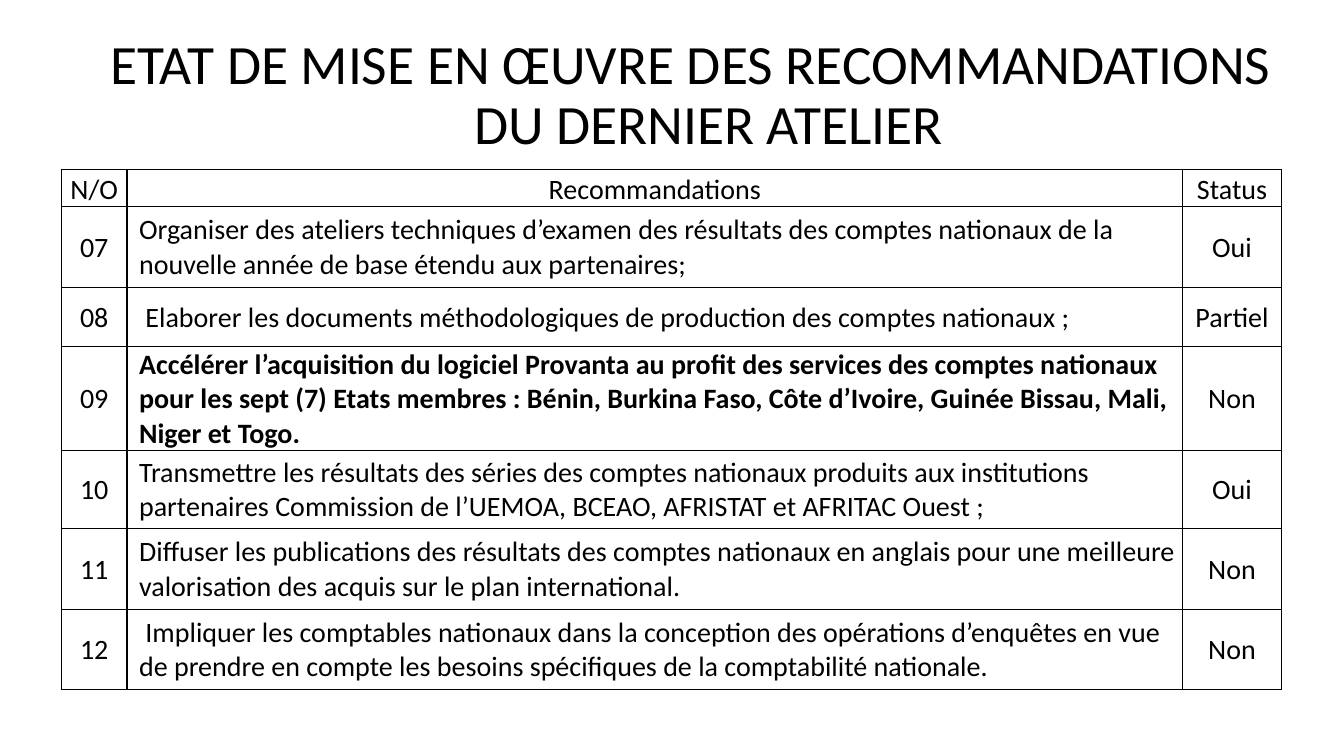
"""Build the slide on the status of the last workshop's recommendations."""
from lxml.etree import SubElement
from pptx import Presentation
from pptx.dml.color import RGBColor
from pptx.enum.text import MSO_ANCHOR, MSO_AUTO_SIZE, PP_ALIGN
from pptx.oxml.ns import qn
from pptx.util import Inches, Pt

TITLE_LINES = ["ETAT DE MISE EN ŒUVRE DES RECOMMANDATIONS", "DU DERNIER ATELIER"]
COLUMN_WIDTHS = [0.65, 10.47, 0.98]
ROW_HEIGHTS = [0.37, 0.8, 0.59, 1.03, 0.77, 0.81, 0.79]
ROWS = [
    ("N/O", "Recommandations", "Status"),
    ("07", "Organiser des ateliers techniques d’examen des résultats des comptes nationaux "
     "de la nouvelle année de base étendu aux partenaires;", "Oui"),
    ("08", " Elaborer les documents méthodologiques de production des comptes nationaux ;",
     "Partiel"),
    ("09", "Accélérer l’acquisition du logiciel Provanta au profit des services des comptes "
     "nationaux pour les sept (7) Etats membres : Bénin, Burkina Faso, Côte d’Ivoire, "
     "Guinée Bissau, Mali, Niger et Togo.", "Non"),
    ("10", "Transmettre les résultats des séries des comptes nationaux produits aux "
     "institutions partenaires Commission de l’UEMOA, BCEAO, AFRISTAT et AFRITAC Ouest ;",
     "Oui"),
    ("11", "Diffuser les publications des résultats des comptes nationaux en anglais pour "
     "une meilleure valorisation des acquis sur le plan international.", "Non"),
    ("12", " Impliquer les comptables nationaux dans la conception des opérations d’enquêtes "
     "en vue de prendre en compte les besoins spécifiques de la comptabilité nationale.",
     "Non"),
]


def add_span(para, text, size, color="000000", bold=False):
    span = para.add_run()
    span.text = text
    span.font.name = "Calibri"
    span.font.size = Pt(size)
    span.font.bold = bold
    span.font.color.rgb = RGBColor.from_string(color)


def add_borders(cell, color="000000"):
    properties = cell._tc.get_or_add_tcPr()
    for side in ("lnL", "lnR", "lnT", "lnB"):
        line = SubElement(properties, qn(f"a:{side}"), w=str(Pt(1)))
        fill = SubElement(line, qn("a:solidFill"))
        SubElement(fill, qn("a:srgbClr"), val=color)


deck = Presentation()
deck.slide_width = Inches(13.33)
deck.slide_height = Inches(7.5)
page = deck.slides.add_slide(deck.slide_layouts[5])

title = page.shapes.title
title.left, title.top = Inches(0.99), Inches(0.4)
title.width, title.height = Inches(11.72), Inches(1.12)
frame = title.text_frame
frame.word_wrap = True
frame.auto_size = MSO_AUTO_SIZE.NONE
frame.vertical_anchor = MSO_ANCHOR.MIDDLE
frame.margin_left = frame.margin_right = 0
for number, text in enumerate(TITLE_LINES):
    para = frame.add_paragraph() if number else frame.paragraphs[0]
    para.alignment = PP_ALIGN.CENTER
    para.line_spacing = 0.9
    para.space_before = Pt(0)
    para._p.get_or_add_pPr().set("marL", str(Inches(0.36 * number)))
    add_span(para, text, 39.6)

table = page.shapes.add_table(
    len(ROWS), len(COLUMN_WIDTHS), Inches(0.61), Inches(1.68),
    Inches(sum(COLUMN_WIDTHS)), Inches(sum(ROW_HEIGHTS))).table
table.first_row = False
table.horz_banding = False
for column, width in zip(table.columns, COLUMN_WIDTHS):
    column.width = Inches(width)
for row, height in zip(table.rows, ROW_HEIGHTS):
    row.height = Inches(height)

for row_number, texts in enumerate(ROWS):
    for column_number, text in enumerate(texts):
        cell = table.cell(row_number, column_number)
        is_recommendation = row_number > 0 and column_number == 1
        cell.margin_left = Inches(0.12 if is_recommendation else 0.01)
        cell.margin_right = cell.margin_top = Inches(0.01)
        cell.margin_bottom = 0
        cell.vertical_anchor = MSO_ANCHOR.MIDDLE if row_number else MSO_ANCHOR.BOTTOM
        add_borders(cell)
        cell.fill.background()
        para = cell.text_frame.paragraphs[0]
        para.alignment = PP_ALIGN.LEFT if is_recommendation else PP_ALIGN.CENTER
        add_span(para, text, 20, bold=is_recommendation and texts[0] == "09")

deck.save("out.pptx")
